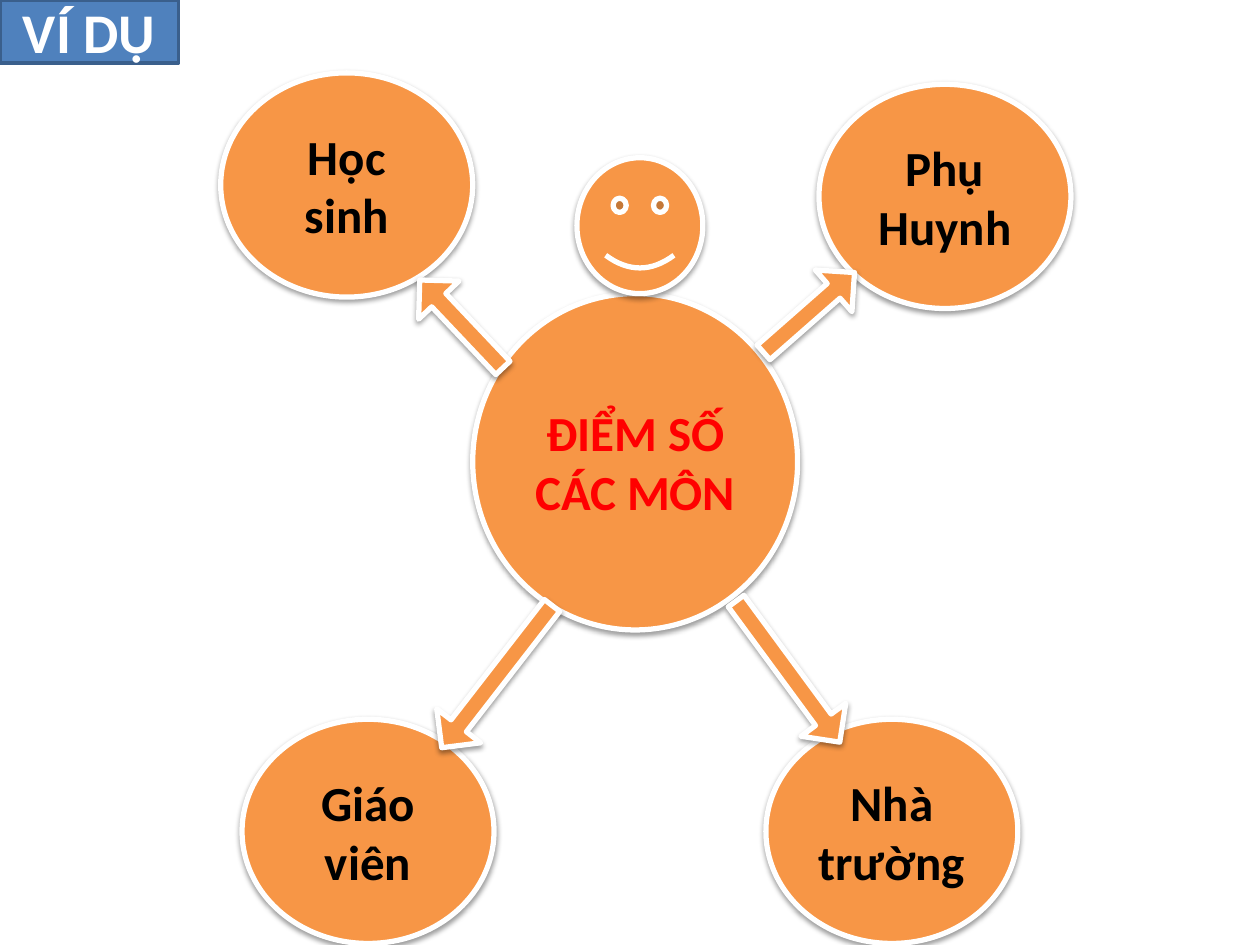
from dataclasses import dataclass

from lxml import etree
from pptx import Presentation
from pptx.dml.color import RGBColor
from pptx.enum.shapes import MSO_SHAPE
from pptx.enum.text import MSO_ANCHOR, MSO_AUTO_SIZE, PP_ALIGN
from pptx.oxml.ns import qn
from pptx.util import Cm, Pt

OVAL = MSO_SHAPE.OVAL
ARROW = MSO_SHAPE.RIGHT_ARROW
SMILEY = MSO_SHAPE.SMILEY_FACE
CENTER = PP_ALIGN.CENTER
MIDDLE = MSO_ANCHOR.MIDDLE
NO_FIT = MSO_AUTO_SIZE.NONE


@dataclass(frozen=True)
class Theme:
    font: str = "Calibri"
    orange: str = "F79646"
    blue: str = "4F81BD"
    navy: str = "3A5F8C"
    white: str = "FFFFFF"
    black: str = "000000"
    red: str = "FF0000"
    title: int = 32
    body: int = 28


class Board:
    def __init__(self, slide, theme):
        self.slide = slide
        self.theme = theme
        self.group = slide.shapes.add_group_shape()

    def paint(self, shape, fill, line, width):
        shape.fill.solid()
        shape.fill.fore_color.rgb = RGBColor.from_string(fill)
        shape.line.color.rgb = RGBColor.from_string(line)
        shape.line.width = Pt(width)

    def label(self, shape, text, size, color):
        frame = shape.text_frame
        frame.text = text
        frame.word_wrap = True
        frame.auto_size = NO_FIT
        frame.vertical_anchor = MIDDLE
        para = frame.paragraphs[0]
        para.alignment = CENTER
        font = para.font
        font.name, font.size, font.bold = self.theme.font, Pt(size), True
        font.color.rgb = RGBColor.from_string(color)

    def shade(self, shape):
        shape.shadow.inherit = False
        effects = shape._element.spPr.find(qn("a:effectLst"))
        outer = etree.SubElement(
            effects, qn("a:outerShdw"), blurRad=str(Pt(3.1)),
            dist=str(Pt(1.6)), dir="5400000", rotWithShape="0")
        color = etree.SubElement(outer, qn("a:srgbClr"), val=self.theme.black)
        etree.SubElement(color, qn("a:alpha"), val="38000")

    def title(self, text, width, height):
        shape = self.slide.shapes.title
        shape.left = shape.top = Cm(0)
        shape.width, shape.height = Cm(width), Cm(height)
        self.paint(shape, self.theme.blue, self.theme.navy, 2)
        self.label(shape, text, self.theme.title, self.theme.white)

    def figure(self, kind, left, top, width, height):
        shape = self.group.shapes.add_shape(
            kind, Cm(left), Cm(top), Cm(width), Cm(height))
        self.paint(shape, self.theme.orange, self.theme.white, 3)
        self.shade(shape)
        return shape

    def bubble(self, text, left, top, width, height, color):
        shape = self.figure(OVAL, left, top, width, height)
        self.label(shape, text, self.theme.body, color)

    def arrow(self, left, top, length, angle):
        shape = self.figure(ARROW, left, top, length, 1.12)
        shape.adjustments[0] = 0.35
        shape.adjustments[1] = 0.5
        shape.rotation = angle


def main():
    deck = Presentation()
    deck.slide_width, deck.slide_height = Cm(25.4), Cm(19.05)
    theme = Theme()
    board = Board(deck.slides.add_slide(deck.slide_layouts[5]), theme)
    board.title("VÍ DỤ", 3.6, 1.27)

    # Central topic
    board.bubble("ĐIỂM SỐ CÁC MÔN", 9.53, 5.92, 6.55, 6.78, theme.red)

    # People around it
    for text, left, top in (
        ("Giáo viên", 4.88, 14.5),
        ("Nhà trường", 15.44, 14.5),
        ("Học sinh", 4.45, 1.47),
        ("Phụ Huynh", 16.51, 1.7),
    ):
        board.bubble(text, left, top, 5.08, 4.52, theme.black)

    # Arrows from the topic outwards
    for left, top, length, angle in (
        (14.12, 12.98, 3.53, 53.7),
        (8.08, 5.97, 2.44, 226.6),
        (8.2, 13.08, 3.63, 127.8),
        (15.09, 5.74, 2.44, 318.7),
    ):
        board.arrow(left, top, length, angle)

    # Head on top of the topic
    board.figure(SMILEY, 11.63, 3.18, 2.54, 2.74)

    deck.save("out.pptx")


if __name__ == "__main__":
    main()
